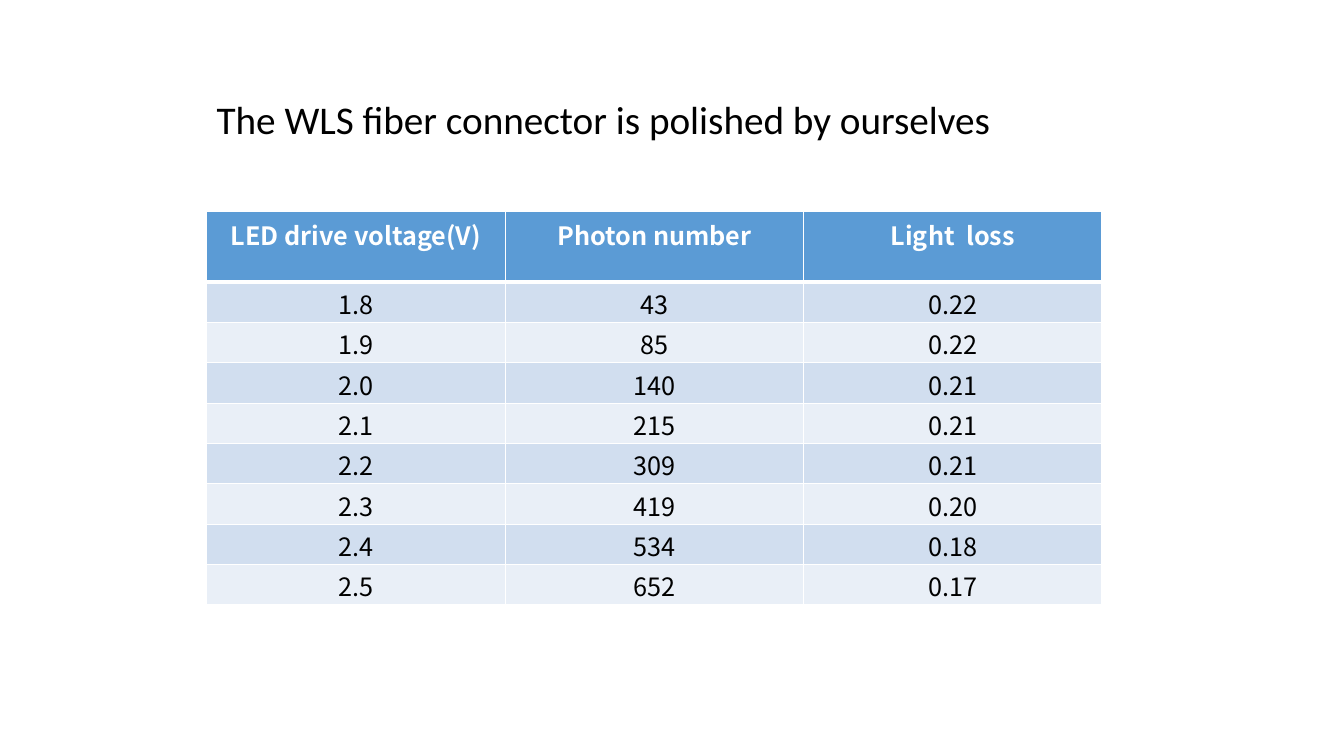
from lxml import etree
from pptx import Presentation
from pptx.dml.color import RGBColor
from pptx.enum.text import PP_ALIGN
from pptx.oxml.ns import qn
from pptx.util import Inches, Pt

CENTER = PP_ALIGN.CENTER
BLACK, WHITE = "000000", "FFFFFF"
HEADER_FILL = "5B9BD5"
BAND_FILLS = ("D1DEEF", "E9EFF7")
THIN, THICK = 0.96, 3
HEADER_HEIGHT, ROW_HEIGHT = 0.7, 0.4
HEADERS = ("LED drive voltage(V)", "Photon number", "Light  loss")
READINGS = (
    ("1.8", "43", "0.22"),
    ("1.9", "85", "0.22"),
    ("2.0", "140", "0.21"),
    ("2.1", "215", "0.21"),
    ("2.2", "309", "0.21"),
    ("2.3", "419", "0.20"),
    ("2.4", "534", "0.18"),
    ("2.5", "652", "0.17"),
)


def rgb(color):
    """Turn a hex string into a colour."""
    return RGBColor.from_string(color)


def set_text(tf, text, size, font, color, bold=False):
    """Write one formatted paragraph and return it."""
    p = tf.paragraphs[0]
    p.text = text
    p.font.size = Pt(size)
    p.font.name = font
    p.font.bold = bold
    p.font.color.rgb = rgb(color)
    return p


def add_title(slide, text):
    """Add the heading above the table."""
    sp = slide.shapes.add_textbox(Inches(2.05), Inches(0.9), Inches(8.03), Inches(1.03))
    sp.text_frame.word_wrap = True
    set_text(sp.text_frame, text, 28, "Calibri", BLACK)


def add_border(cell, side, width):
    """Draw a white line on one side of a cell."""
    tc_pr = cell._tc.get_or_add_tcPr()
    ln = etree.SubElement(tc_pr, qn(f"a:ln{side}"), w=str(Pt(width)))
    fill = etree.SubElement(ln, qn("a:solidFill"))
    etree.SubElement(fill, qn("a:srgbClr"), val=WHITE)


def format_cell(cell, text, row):
    """Fill, border and write one cell according to its row."""
    header = row == 0
    cell.margin_top = Inches(0.05 if header else 0.03)
    cell.margin_bottom = 0
    for side in "LRTB":
        thick = (side == "B" and header) or (side == "T" and row == 1)
        add_border(cell, side, THICK if thick else THIN)
    cell.fill.solid()
    cell.fill.fore_color.rgb = rgb(HEADER_FILL if header else BAND_FILLS[(row - 1) % 2])
    color = WHITE if header else BLACK
    p = set_text(cell.text_frame, text, 18, "Noto Sans CJK SC", color, header)
    p.alignment = CENTER


def add_readings_table(slide, rows):
    """Add the table of light loss by drive voltage."""
    height = HEADER_HEIGHT + ROW_HEIGHT * (len(rows) - 1)
    table = slide.shapes.add_table(
        len(rows), len(HEADERS), Inches(2.05), Inches(2.1), Inches(8.88), Inches(height)
    ).table
    for r, values in enumerate(rows):
        table.rows[r].height = Inches(ROW_HEIGHT if r else HEADER_HEIGHT)
        for c, text in enumerate(values):
            format_cell(table.cell(r, c), text, r)


def main():
    """Build and save the slide."""
    prs = Presentation()
    prs.slide_width, prs.slide_height = Inches(13.33), Inches(7.5)
    slide = prs.slides.add_slide(prs.slide_layouts[6])
    add_title(slide, "The WLS fiber connector is polished by ourselves")
    add_readings_table(slide, (HEADERS, *READINGS))
    prs.save("out.pptx")


if __name__ == "__main__":
    main()
